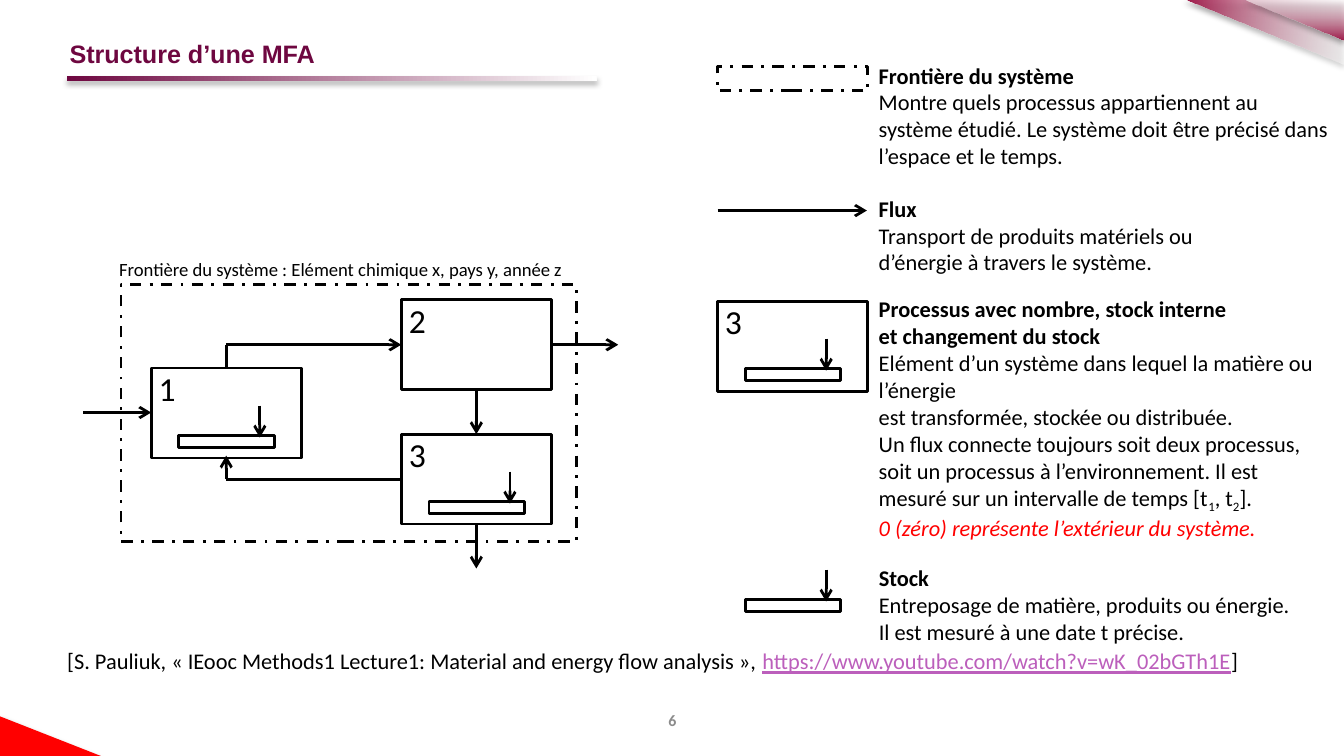
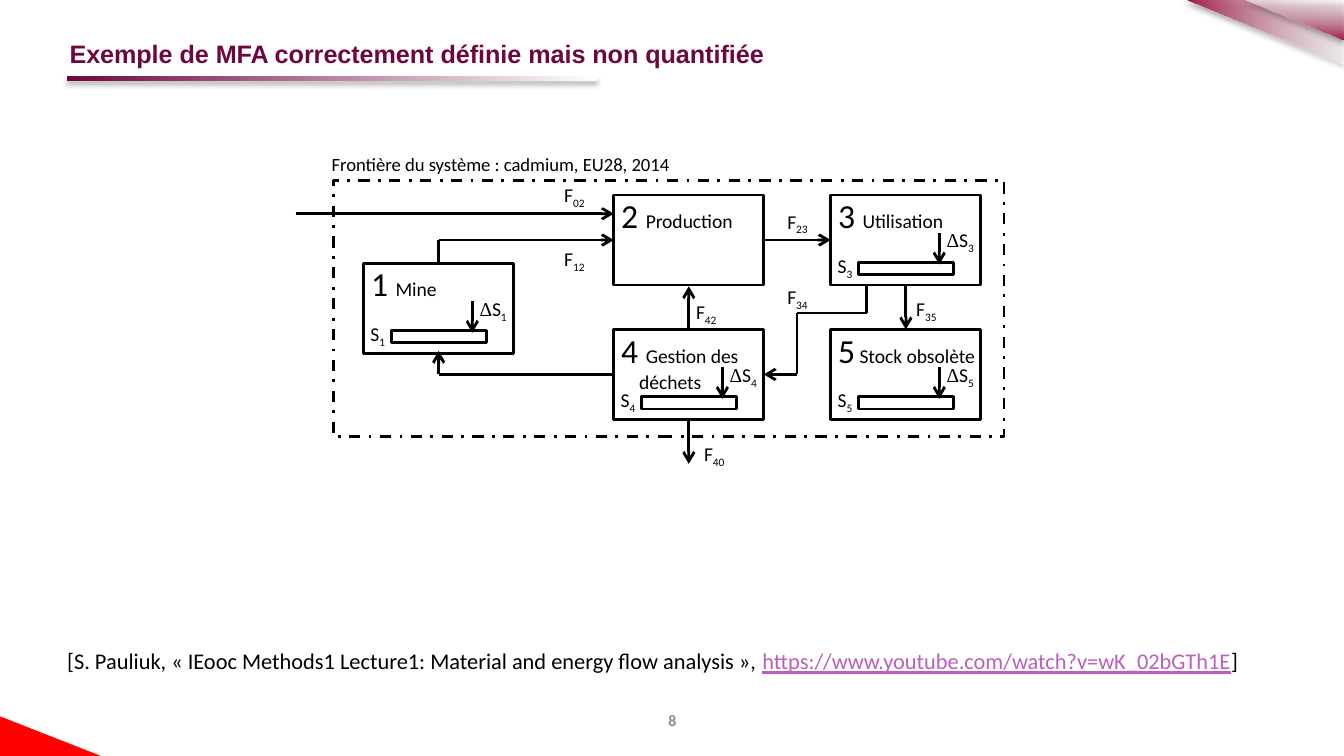
from dataclasses import dataclass, replace
from typing import NamedTuple

from lxml import etree
from pptx import Presentation
from pptx.dml.color import RGBColor
from pptx.enum.dml import MSO_LINE
from pptx.enum.shapes import MSO_CONNECTOR, MSO_SHAPE
from pptx.enum.text import MSO_ANCHOR, MSO_AUTO_SIZE, PP_ALIGN
from pptx.oxml.ns import qn
from pptx.util import Pt

RECTANGLE = MSO_SHAPE.RECTANGLE
STRAIGHT = MSO_CONNECTOR.STRAIGHT
DASH_DOT = MSO_LINE.DASH_DOT
TOP, MIDDLE = MSO_ANCHOR.TOP, MSO_ANCHOR.MIDDLE
LEFT, CENTER, RIGHT = PP_ALIGN.LEFT, PP_ALIGN.CENTER, PP_ALIGN.RIGHT


@dataclass(frozen=True)
class Theme:
    ink: str = "000000"
    plum: str = "6E0740"
    crimson: str = "9D1747"
    white: str = "FFFFFF"
    red: str = "FF0000"
    link: str = "BC5FBC"
    grey: str = "8C8C8C"
    body_font: str = "Calibri"
    title_font: str = "Arial"
    symbol_font: str = "Times New Roman"
    number_size: float = 18
    title_size: float = 13.5
    body_size: float = 12
    label_size: float = 10.5
    caption_size: float = 10
    page_size: float = 8.5
    stroke: float = 1.5


THEME = Theme()


class Point(NamedTuple):
    x: float
    y: float

    def shifted(self, dx: float, dy: float) -> "Point":
        return Point(self.x + dx, self.y + dy)


class Box(NamedTuple):
    x: float
    y: float
    width: float
    height: float

    def lengths(self) -> list:
        return [Pt(value) for value in self]


@dataclass(frozen=True)
class Span:
    text: str
    size: float = THEME.body_size
    color: str = THEME.ink
    font: str = THEME.body_font
    bold: bool = False
    italic: bool = False
    underline: bool = False
    subscript: bool = False


class Process(NamedTuple):
    number: str
    place: Point
    name: str = ""
    stock: bool = True
    gap: str = "number"


class Legend(NamedTuple):
    box: Box
    paragraphs: list
    wrap: bool = True


class Corner(NamedTuple):
    points: list
    angle: float = 0
    opacity: int = 0


# Measures inside a diagram count from the top left of its system boundary.
PROCESS_WIDTH, PROCESS_HEIGHT = 80.4, 48.2
COLUMNS = (16.2, 150.2, 266.4)
ROWS = (8, 80)
MINE = Point(COLUMNS[0], 44.6)
MINE_CENTER = MINE.x + PROCESS_WIDTH / 2
MIDDLE_CENTER = COLUMNS[1] + PROCESS_WIDTH / 2
MIDDLE_RIGHT = COLUMNS[1] + PROCESS_WIDTH
UPPER_FLOW, LOWER_FLOW = (row + PROCESS_HEIGHT / 2 for row in ROWS)
ROW_GAP = (ROWS[0] + PROCESS_HEIGHT + 0.7, ROWS[1])
BOUNDARY_HEIGHT = 137.5
STOCK_OFFSET = (14.8, 36)

CORNERS = [
    Corner([(720, 34.6), (634.3, 0), (720, 0)], 352, 47),
    Corner([(720, 21.6), (666, 0), (720, 0)], 90, 57),
    Corner([(0, 383.8), (54, 405), (0, 405)]),
]

SOURCE = [
    Span("[S. Pauliuk, «\u00a0IEooc Methods1 Lecture1: Material and energy flow analysis\u00a0», "),
    Span("https://www.youtube.com/watch?v=wK_02bGTh1E", color=THEME.link, underline=True),
    Span("]"),
]

LEGEND_X, LEGEND_TEXT_X = 384.4, 463.7
LEGENDS = [
    Legend(Box(LEGEND_TEXT_X, 29.5, 256.3, 65.5), [[
        Span("Frontière du système\n", bold=True),
        Span("Montre quels processus appartiennent au système étudié. "
             "Le système doit être précisé dans l’espace et le temps.")]]),
    Legend(Box(LEGEND_TEXT_X, 100.8, 230.4, 51), [[
        Span("Flux\n", bold=True),
        Span("Transport de produits matériels ou d’énergie à travers le système.")]]),
    Legend(Box(LEGEND_TEXT_X, 154.8, 247.7, 138), [
        [Span("Processus avec nombre, stock interne\net changement du stock", bold=True)],
        [Span("Elément d’un système dans lequel la matière ou l’énergie\n"
              "est transformée, stockée ou distribuée.\n"
              "Un flux connecte toujours soit deux processus, soit un processus à "
              "l’environnement. Il est mesuré sur un intervalle de temps [t"),
         Span("1", subscript=True), Span(", t"), Span("2", subscript=True), Span("].")],
        [Span("0 (zéro) représente l’extérieur du système.", color=THEME.red, italic=True)]]),
    Legend(Box(LEGEND_TEXT_X, 298.8, 241.2, 51), [[
        Span("Stock\n", bold=True),
        Span("Entreposage de matière, produits ou énergie.\n"
             "Il est mesuré à une date t précise.")]], wrap=False),
]

FLOW_LABELS = {
    "02": (116.6, -2.2), "12": (116.6, 32.4), "23": (236.1, 12.2), "40": (191.5, 136.8),
    "42": (187.2, 60.5), "35": (305.2, 59), "34": (236.1, 52.5),
}


def color(value: str) -> RGBColor:
    return RGBColor.from_string(value)


def add_span(paragraph, span: Span) -> None:
    for index, line in enumerate(span.text.split("\n")):
        if index:
            paragraph.add_line_break()
        if not line:
            continue
        run = paragraph.add_run()
        run.text = line
        formats = {"size": Pt(span.size), "name": span.font, "bold": span.bold,
                   "italic": span.italic, "underline": span.underline}
        for name, value in formats.items():
            setattr(run.font, name, value)
        run.font.color.rgb = color(span.color)
        if span.subscript:
            run.font._element.set("baseline", "-25000")


def fill_text(shape, paragraphs: list, margins: tuple = (7.2, 3.6, 7.2, 3.6),
              align=LEFT, **frame_formats) -> None:
    frame = shape.text_frame
    sides = ("margin_left", "margin_top", "margin_right", "margin_bottom")
    formats = {"word_wrap": True, "vertical_anchor": TOP, **frame_formats}
    formats.update(zip(sides, map(Pt, margins)))
    for name, value in formats.items():
        setattr(frame, name, value)
    for index, spans in enumerate(paragraphs):
        paragraph = frame.add_paragraph() if index else frame.paragraphs[0]
        paragraph.alignment = align
        for span in spans:
            add_span(paragraph, span)


def add_text(slide, box: Box, paragraphs: list, **formats) -> None:
    fill_text(slide.shapes.add_textbox(*box.lengths()), paragraphs, **formats)


def add_note(slide, box: Box, spans: list, align=LEFT) -> None:
    """Single line that keeps its own width."""
    add_text(slide, box, [spans], align=align, word_wrap=False,
             auto_size=MSO_AUTO_SIZE.SHAPE_TO_FIT_TEXT)


def add_outline(slide, box: Box, dash=None):
    shape = slide.shapes.add_shape(RECTANGLE, *box.lengths())
    shape.shadow.inherit = False
    shape.fill.background()
    shape.line.color.rgb = color(THEME.ink)
    shape.line.width = Pt(THEME.stroke)
    if dash is not None:
        shape.line.dash_style = dash
    return shape


def add_flow(slide, *points: Point) -> None:
    """Straight legs through the points, with an arrowhead on the last one."""
    legs = list(zip(points, points[1:]))
    for index, (start, end) in enumerate(legs, 1):
        connector = slide.shapes.add_connector(
            STRAIGHT, Pt(start.x), Pt(start.y), Pt(end.x), Pt(end.y))
        connector.line.color.rgb = color(THEME.ink)
        connector.line.width = Pt(THEME.stroke)
        properties = connector._element.spPr
        if index == len(legs):
            etree.SubElement(properties.find(qn("a:ln")), qn("a:tailEnd"), type="arrow")
        etree.SubElement(properties, qn("a:effectLst"))


def add_stock(slide, place: Point) -> None:
    add_outline(slide, Box(*place, 51.2, 6.6))
    add_flow(slide, place.shifted(43.4, -15.9), place.shifted(43.4, 1.2))


def add_process(slide, origin: Point, process: Process) -> Point:
    place = origin.shifted(*process.place)
    shape = add_outline(slide, Box(*place, PROCESS_WIDTH, PROCESS_HEIGHT))
    number = Span(process.number, THEME.number_size)
    name = Span(process.name, THEME.label_size)
    if process.name and process.gap == "number":
        number = replace(number, text=number.text + " ")
    elif process.name:
        name = replace(name, text=" " + name.text)
    fill_text(shape, [[number, name]], margins=(4, 0, 0, 0))
    properties = shape.text_frame.paragraphs[0]._p.get_or_add_pPr()
    properties.set("marL", str(Pt(9.7)))
    properties.set("indent", str(-Pt(9.7)))
    if process.stock:
        add_stock(slide, place.shifted(*STOCK_OFFSET))
    return place


def add_symbol(slide, place: Point, width: float, letter: str, index: str,
               change: bool = False) -> None:
    spans = [Span(letter, THEME.label_size), Span(index, THEME.label_size, subscript=True)]
    if change:
        spans.insert(0, Span("Δ", THEME.label_size, font=THEME.symbol_font))
    add_note(slide, Box(*place, width, 19.9), spans)


def add_system(slide, origin: Point, width: float, caption: str, caption_width: float,
               processes: list, flows: list) -> list:
    """Boundary, caption, processes, shared and own flows; returns process places."""
    add_outline(slide, Box(*origin, width, BOUNDARY_HEIGHT), DASH_DOT)
    add_note(slide, Box(origin.x - 8, origin.y - 18, caption_width, 19.4),
             [Span(f"Frontière du système : {caption}", THEME.caption_size)])
    places = [add_process(slide, origin, process) for process in processes]
    shared = [
        [(MINE_CENTER, MINE.y), (MINE_CENTER, UPPER_FLOW), (COLUMNS[1], UPPER_FLOW)],
        [(MIDDLE_RIGHT, UPPER_FLOW), (COLUMNS[2], UPPER_FLOW)],
        [(COLUMNS[1], LOWER_FLOW), (MINE_CENTER, LOWER_FLOW), (MINE_CENTER, 91.5)],
        [(MIDDLE_CENTER, ROWS[1] + PROCESS_HEIGHT), (MIDDLE_CENTER, 152)],
    ]
    for route in shared + flows:
        add_flow(slide, *(origin.shifted(*point) for point in route))
    return places


def decorate(shape, fill_color: str, angle: float = 0, opacity: int = 0) -> None:
    """Fill fading to white when an opacity is given, no line, soft shadow."""
    if opacity:
        shape.fill.gradient()
        shape.fill.gradient_angle = angle
        for stop, value in zip(shape.fill.gradient_stops, (fill_color, THEME.white)):
            stop.color.rgb = color(value)
        last = list(shape._element.spPr.iter(qn("a:srgbClr")))[-1]
        etree.SubElement(last, qn("a:alpha"), val=str(opacity * 1000))
    else:
        shape.fill.solid()
        shape.fill.fore_color.rgb = color(fill_color)
    shape.line.fill.background()
    shape.shadow.inherit = False
    effects = shape._element.spPr.find(qn("a:effectLst"))
    shadow = etree.SubElement(effects, qn("a:outerShdw"), blurRad=str(Pt(3.1)),
                              dist=str(Pt(1.8)), dir="5400000", rotWithShape="0")
    shade = etree.SubElement(shadow, qn("a:srgbClr"), val=THEME.ink)
    etree.SubElement(shade, qn("a:alpha"), val="35000")


def start_slide(presentation, title: str, page: str):
    slide = presentation.slides.add_slide(presentation.slide_layouts[6])
    rule = slide.shapes.add_shape(RECTANGLE, *Box(36, 41, 283.7, 2.2).lengths())
    decorate(rule, THEME.plum, opacity=100)
    for corner in CORNERS:
        first, *others = [(Pt(x), Pt(y)) for x, y in corner.points]
        builder = slide.shapes.build_freeform(*first)
        builder.add_line_segments(others, close=True)
        decorate(builder.convert_to_shape(), THEME.crimson if corner.opacity else THEME.red,
                 corner.angle, corner.opacity)
    add_text(slide, Box(246.2, 375.1, 228.2, 21.6),
             [[Span(page, THEME.page_size, THEME.grey, bold=True)]],
             align=CENTER, vertical_anchor=MIDDLE)
    add_text(slide, Box(30.2, 20.2, 648, 16.6),
             [[Span(title, THEME.title_size, THEME.plum, THEME.title_font, bold=True)]],
             margins=(7.2, 0, 0, 0), vertical_anchor=MIDDLE)
    add_note(slide, Box(21.6, 343.4, 648.7, 21.8), SOURCE, RIGHT)
    return slide


def build_structure(presentation) -> None:
    slide = start_slide(presentation, "Structure d’une MFA", "6")
    processes = [Process("2", Point(COLUMNS[1], ROWS[0]), stock=False),
                 Process("3", Point(COLUMNS[1], ROWS[1])), Process("1", MINE)]
    flows = [[(-20.2, 68.4), (MINE.x, 68.4)],
             [(MIDDLE_CENTER, ROW_GAP[0]), (MIDDLE_CENTER, ROW_GAP[1])]]
    add_system(slide, Point(64.8, 152.6), 244, "Elément chimique x, pays y, année z", 254.2,
               processes, flows)
    add_outline(slide, Box(LEGEND_X, 35.7, PROCESS_WIDTH, 13), DASH_DOT)
    add_flow(slide, Point(LEGEND_X, 112.8), Point(LEGEND_X + 80, 112.8))
    add_process(slide, Point(LEGEND_X, 161.4), Process("3", Point(0, 0)))
    add_stock(slide, Point(LEGEND_X + STOCK_OFFSET[0], 321.1))
    for legend in LEGENDS:
        add_text(slide, legend.box, legend.paragraphs, word_wrap=legend.wrap,
                 auto_size=MSO_AUTO_SIZE.SHAPE_TO_FIT_TEXT)


def build_example(presentation) -> None:
    slide = start_slide(
        presentation, "Exemple de MFA correctement définie mais non quantifiée", "8")
    origin = Point(178.6, 96.5)
    processes = [
        Process("2", Point(COLUMNS[1], ROWS[0]), "Production", stock=False),
        Process("4", Point(COLUMNS[1], ROWS[1]), "Gestion des déchets"),
        Process("1", MINE, "Mine"),
        Process("3", Point(COLUMNS[2], ROWS[0]), "Utilisation"),
        Process("5", Point(COLUMNS[2], ROWS[1]), "Stock obsolète", gap="name"),
    ]
    flows = [
        [(-20.2, 18), (COLUMNS[1], 18)],
        [(MIDDLE_CENTER, ROW_GAP[1]), (MIDDLE_CENTER, ROW_GAP[0])],
        [(306.7, ROW_GAP[0]), (306.7, ROW_GAP[1])],
        [(285.8, ROW_GAP[0]), (285.8, 71.2), (248.4, 71.2),
         (248.4, LOWER_FLOW), (MIDDLE_RIGHT, LOWER_FLOW)],
    ]
    places = add_system(slide, origin, 359.3, "cadmium, EU28, 2014", 199.4, processes, flows)
    for process, place in zip(processes, places):
        if process.stock:
            add_symbol(slide, place.shifted(-3.4, 28), 23, "S", process.number)
            add_symbol(slide, place.shifted(55, 14.3), 29.5, "S", process.number, change=True)
    for index, offset in FLOW_LABELS.items():
        add_symbol(slide, origin.shifted(*offset), 26.6, "F", index)


def main() -> None:
    presentation = Presentation()
    presentation.slide_width, presentation.slide_height = Pt(720), Pt(405)
    build_structure(presentation)
    build_example(presentation)
    presentation.save("out.pptx")


if __name__ == "__main__":
    main()
